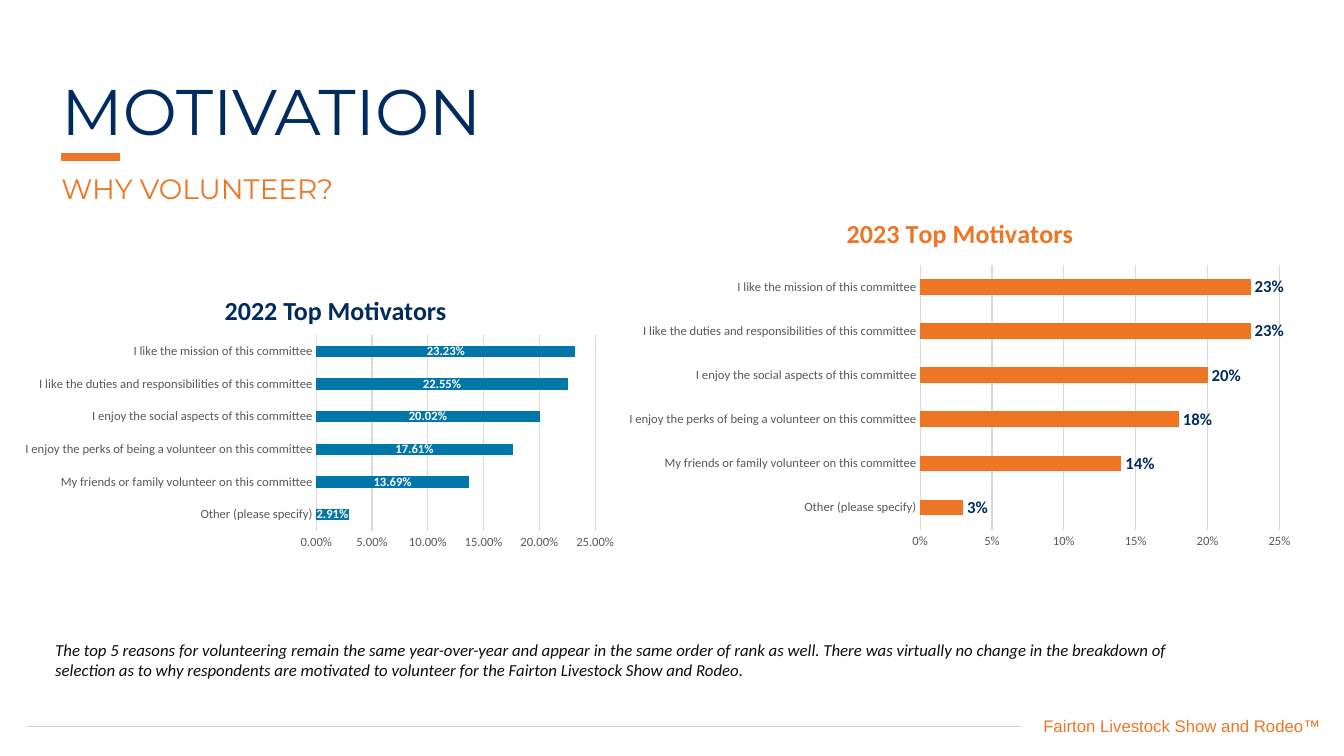
from lxml import etree
from pptx import Presentation
from pptx.chart.data import CategoryChartData
from pptx.dml.color import RGBColor
from pptx.enum.chart import XL_CHART_TYPE as ChartType
from pptx.enum.chart import XL_LABEL_POSITION as LabelPosition
from pptx.enum.chart import XL_TICK_MARK as TickMark
from pptx.enum.shapes import MSO_CONNECTOR as Connector
from pptx.enum.text import MSO_ANCHOR as Anchor
from pptx.enum.text import MSO_AUTO_SIZE as AutoSize
from pptx.enum.text import PP_ALIGN as Align
from pptx.oxml import parse_xml
from pptx.oxml.ns import qn
from pptx.util import Pt

NAVY = RGBColor(0x00, 0x2B, 0x5F)
ORANGE = RGBColor(0xEE, 0x76, 0x24)
CHART_ORANGE = RGBColor(0xED, 0x75, 0x24)
BLUE = RGBColor(0x00, 0x76, 0xA9)
WHITE = RGBColor(0xFF, 0xFF, 0xFF)
INK = RGBColor(0x0D, 0x0D, 0x0D)
AXIS_GREY = RGBColor(0x59, 0x59, 0x59)
GRID_GREY = RGBColor(0xD9, 0xD9, 0xD9)
RULE_GREY = RGBColor(0xD1, 0xD3, 0xD4)
CHART_NS = "http://schemas.openxmlformats.org/drawingml/2006/chart"


def style_font(font, color, **formats):
    font.color.rgb = color
    for name, value in formats.items():
        setattr(font, name, value)


def manual_layout(**values):
    parts = "".join(f'<c:{name} val="{value}"/>' for name, value in values.items())
    return parse_xml(f'<c:layout xmlns:c="{CHART_NS}"><c:manualLayout>{parts}</c:manualLayout></c:layout>')


presentation = Presentation()
presentation.slide_width = Pt(960)
presentation.slide_height = Pt(540)
slide = presentation.slides.add_slide(presentation.slide_layouts[5])

lines = [
    (19.4, 729.4, 519.1, RULE_GREY, 1),
    (43.9, 85.7, 112.3, ORANGE, 6),
]
for left, right, top, color, width in lines:
    line = slide.shapes.add_connector(Connector.STRAIGHT, Pt(left), Pt(top), Pt(right), Pt(top))
    line.line.color.rgb = color
    line.line.width = Pt(width)
    etree.SubElement(line._element.spPr, qn("a:effectLst"))

HEADING = {"line_spacing": 0.9, "space_before": Pt(10), "alignment": Align.LEFT}
texts = [
    ("MOTIVATION", (36.7, 53.3, 952.6, 32.4), NAVY,
     {"name": "Montserrat", "size": Pt(46)}, HEADING),
    ("WHY VOLUNTEER?", (36.7, 121.7, 952.6, 32.4), CHART_ORANGE,
     {"name": "Montserrat", "size": Pt(20)}, HEADING),
    ("2022 Top Motivators", (153.4, 206.6, 214.6, 29.5), NAVY,
     {"name": "Calibri", "size": Pt(18.6), "bold": True}, {}),
    ("The top 5 reasons for volunteering remain the same year-over-year and appear in the same "
     "order of rank as well. There was virtually no change in the breakdown of selection as to why "
     "respondents are motivated to volunteer for the Fairton Livestock Show and Rodeo.",
     (32.4, 453.6, 825.8, 36), INK,
     {"name": "Calibri", "size": Pt(12), "italic": True}, {}),
    ("Fairton Livestock Show and Rodeo™", (496.1, 507.6, 454.3, 21.6), ORANGE,
     {"name": "Arial", "size": Pt(12)}, {"alignment": Align.RIGHT}),
]
for text, box, color, font_formats, paragraph_formats in texts:
    left, top, width, height = map(Pt, box)
    if text == "MOTIVATION":
        shape = slide.shapes.title
        shape.left, shape.top, shape.width, shape.height = left, top, width, height
    else:
        shape = slide.shapes.add_textbox(left, top, width, height)
    frame = shape.text_frame
    frame.text = text
    frame.word_wrap = True
    frame.auto_size = AutoSize.NONE
    frame.vertical_anchor = Anchor.TOP
    paragraph = frame.paragraphs[0]
    for name, value in paragraph_formats.items():
        setattr(paragraph, name, value)
    style_font(paragraph.runs[0].font, color, **font_formats)

motivators = [
    "Other (please specify)",
    "My friends or family volunteer on this committee",
    "I enjoy the perks of being a volunteer on this committee",
    "I enjoy the social aspects of this committee",
    "I like the duties and responsibilities of this committee",
    "I like the mission of this committee",
]
charts = [
    {"type": ChartType.BAR_STACKED, "box": (10.1, 236.2, 437.8, 159.8), "title": None,
     "values": (0.0291, 0.1369, 0.1761, 0.2002, 0.2255, 0.2323), "format": "0.00%",
     "fill": BLUE, "label_color": WHITE, "label_size": 9, "position": LabelPosition.CENTER,
     "plot": {"x": 0.493, "y": 0.02, "w": 0.455, "h": 0.876}},
    {"type": ChartType.BAR_CLUSTERED, "box": (439.9, 141.1, 491.8, 256.3),
     "title": "2023 Top Motivators",
     "values": (0.03, 0.14, 0.18, 0.2, 0.23, 0.23), "format": "0%",
     "fill": CHART_ORANGE, "label_color": NAVY, "label_size": 12,
     "position": LabelPosition.OUTSIDE_END,
     "plot": {"x": 0.442, "y": 0.188, "w": 0.522, "h": 0.738}},
]
for details in charts:
    data = CategoryChartData(number_format=details["format"])
    data.categories = motivators
    data.add_series("Series 1", details["values"])
    chart = slide.shapes.add_chart(details["type"], *map(Pt, details["box"]), data).chart
    chart.has_legend = False
    chart.font.name = "Calibri"
    chart.font.size = Pt(10)

    chart.has_title = details["title"] is not None
    if chart.has_title:
        title = chart.chart_title
        title.text_frame.text = details["title"]
        title.include_in_layout = False
        style_font(title.text_frame.paragraphs[0].runs[0].font, CHART_ORANGE,
                   name="Calibri", size=Pt(18.6), bold=True)
        title._element.find(qn("c:tx")).addnext(
            manual_layout(xMode="edge", yMode="edge", x=0.33, y=0.05))

    plot_area = chart._chartSpace.chart.plotArea
    for layout in plot_area.findall(qn("c:layout")):
        plot_area.remove(layout)
    plot_area.insert(0, manual_layout(layoutTarget="inner", xMode="edge", yMode="edge", **details["plot"]))

    for axis in (chart.category_axis, chart.value_axis):
        axis.major_tick_mark = TickMark.NONE
        axis.minor_tick_mark = TickMark.NONE
        style_font(axis.tick_labels.font, AXIS_GREY, name="Calibri", size=Pt(9))
    chart.category_axis.format.line.color.rgb = GRID_GREY
    chart.category_axis.format.line.width = Pt(0.75)

    value_axis = chart.value_axis
    value_axis.minimum_scale = 0
    value_axis.maximum_scale = 0.25
    value_axis.major_unit = 0.05
    value_axis.format.line.fill.background()
    value_axis.major_gridlines.format.line.color.rgb = GRID_GREY
    value_axis.major_gridlines.format.line.width = Pt(0.75)
    value_axis.tick_labels.number_format = details["format"]
    value_axis.tick_labels.number_format_is_linked = False

    plot = chart.plots[0]
    plot.gap_width = 182
    plot.vary_by_categories = False
    series = plot.series[0]
    series.format.fill.solid()
    series.format.fill.fore_color.rgb = details["fill"]
    labels = series.data_labels
    labels.show_value = True
    labels.number_format = details["format"]
    labels.number_format_is_linked = False
    labels.position = details["position"]
    style_font(labels.font, details["label_color"], name="Calibri",
               size=Pt(details["label_size"]), bold=True)

presentation.save("out.pptx")
